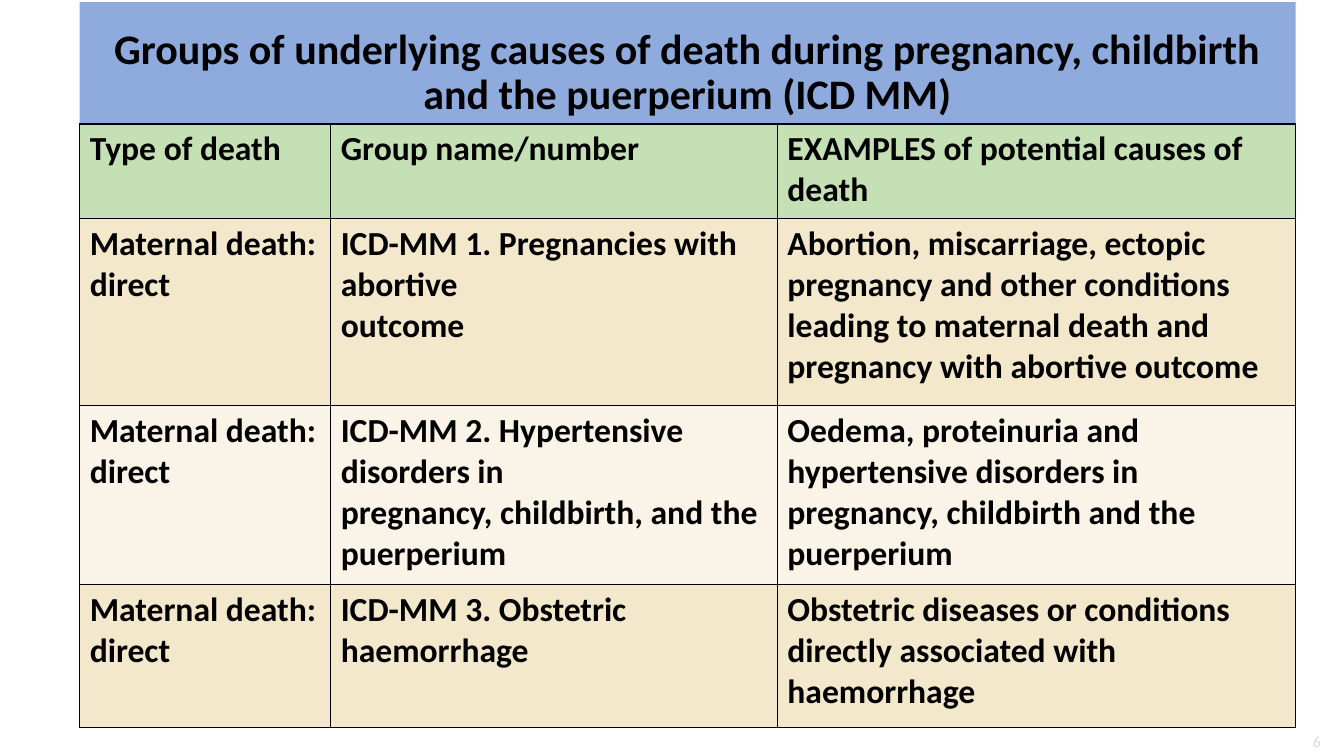
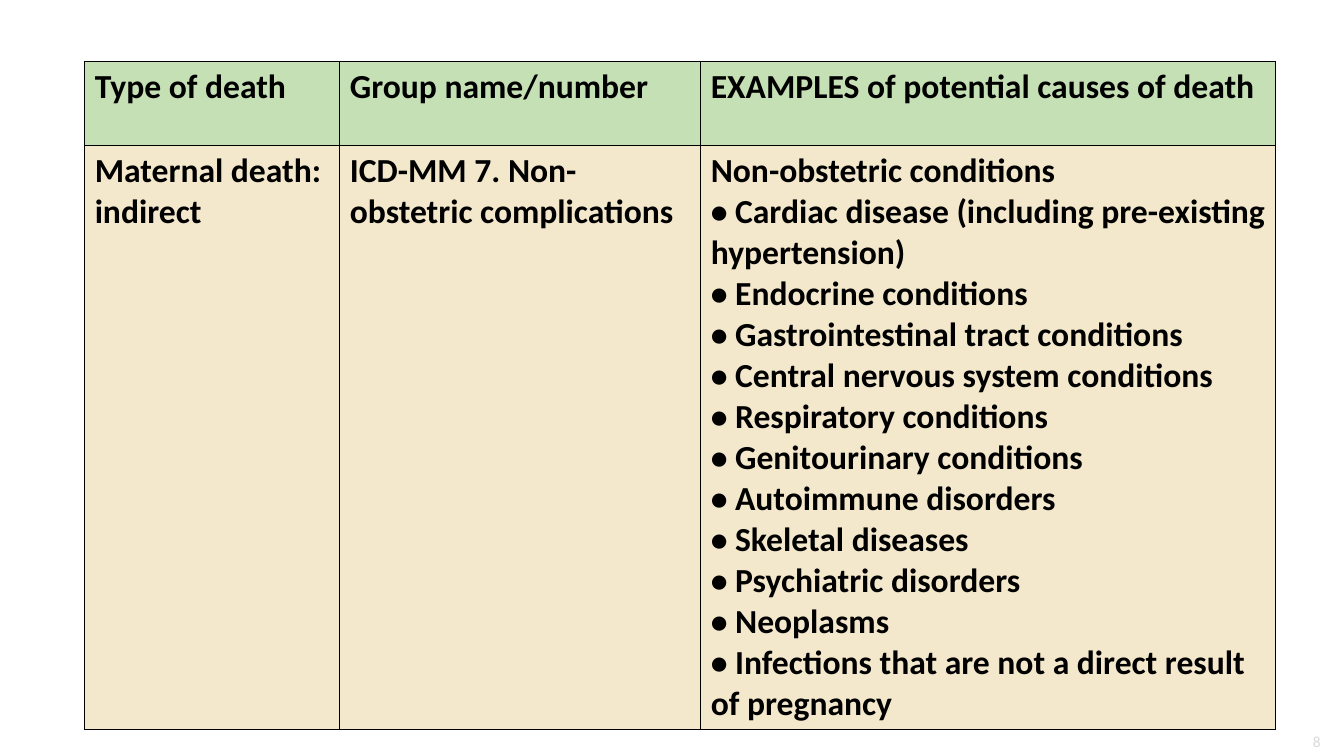
import copy

import lxml.etree
import pptx
import pptx.dml.color
import pptx.enum.shapes
import pptx.enum.text
import pptx.oxml.ns
import pptx.util

Inches = pptx.util.Inches
Pt = pptx.util.Pt

COLORS = {
    "text": "000000",
    "border": "000000",
    "title band": "8FAADC",
    "header": "C5E0B4",
    "odd row": "F4E8CC",
    "even row": "F9F4E7",
    "page number": "D9D9D9",
}
FONT = "Calibri"
HEADER = ["Type of death", "Group name/number", "EXAMPLES of potential causes of death"]

DIRECT_CAUSES = [
    ["Maternal death: direct",
     "ICD-MM 1. Pregnancies with abortive\noutcome",
     "Abortion, miscarriage, ectopic pregnancy and other conditions leading to "
     "maternal death and pregnancy with abortive outcome"],
    ["Maternal death: direct",
     "ICD-MM 2. Hypertensive disorders in\npregnancy, childbirth, and the puerperium",
     "Oedema, proteinuria and hypertensive disorders in pregnancy, childbirth "
     "and the puerperium"],
    ["Maternal death: direct",
     "ICD-MM 3. Obstetric haemorrhage",
     "Obstetric diseases or conditions directly associated with haemorrhage"],
]

NON_OBSTETRIC_CONDITIONS = [
    "Cardiac disease (including pre-existing hypertension)",
    "Endocrine conditions",
    "Gastrointestinal tract conditions",
    "Central nervous system conditions",
    "Respiratory conditions",
    "Genitourinary conditions",
    "Autoimmune disorders",
    "Skeletal diseases",
    "Psychiatric disorders",
    "Neoplasms",
    "Infections that are not a direct result of pregnancy",
]
INDIRECT_CAUSES = [
    ["Maternal death: indirect",
     "ICD-MM 7. Non-obstetric complications",
     "\n".join(["Non-obstetric conditions"]
               + [f"• {condition}" for condition in NON_OBSTETRIC_CONDITIONS])],
]


def rgb(name):
    return pptx.dml.color.RGBColor.from_string(COLORS[name])


def fill_with(target, color):
    target.fill.solid()
    target.fill.fore_color.rgb = rgb(color)


def write(text_frame, text, size, color="text", bold=True):
    text_frame.text = text
    for paragraph in text_frame.paragraphs:
        for run in paragraph.runs:
            run.font.name = FONT
            run.font.size = Pt(size)
            run.font.bold = bold
            run.font.color.rgb = rgb(color)


def place(shape, left, top, width, height):
    shape.left, shape.top = Inches(left), Inches(top)
    shape.width, shape.height = Inches(width), Inches(height)


def add_cell_borders(cell):
    qn = pptx.oxml.ns.qn
    properties = cell._tc.get_or_add_tcPr()
    for side in ("lnL", "lnR", "lnT", "lnB"):
        line = lxml.etree.SubElement(properties, qn(f"a:{side}"), w=str(Pt(1)))
        solid = lxml.etree.SubElement(line, qn("a:solidFill"))
        lxml.etree.SubElement(solid, qn("a:srgbClr"), val=COLORS["border"])


def add_title_band(slide, text, left, top, width, height):
    title = slide.shapes.title
    place(title, left, top, width, height)
    fill_with(title, "title band")
    write(title.text_frame, text, 30)
    title.text_frame.word_wrap = True
    title.text_frame.auto_size = pptx.enum.text.MSO_AUTO_SIZE.NONE
    title.text_frame.vertical_anchor = pptx.enum.text.MSO_ANCHOR.BOTTOM
    paragraph = title.text_frame.paragraphs[0]
    paragraph.alignment = pptx.enum.text.PP_ALIGN.CENTER
    paragraph.line_spacing = 0.9


def add_causes_table(slide, causes, left, top, column_widths, row_heights):
    rows = [HEADER] + causes
    table = slide.shapes.add_table(
        len(rows), len(HEADER), Inches(left), Inches(top),
        Inches(sum(column_widths)), Inches(sum(row_heights))).table
    table.first_row = table.horz_banding = False
    for column, width in zip(table.columns, column_widths):
        column.width = Inches(width)
    for index, (row, height, texts) in enumerate(zip(table.rows, row_heights, rows)):
        row.height = Inches(height)
        color = "header" if index == 0 else "odd row" if index % 2 else "even row"
        for cell, text in zip(row.cells, texts):
            add_cell_borders(cell)
            fill_with(cell, color)
            write(cell.text_frame, text, 24)


def add_page_number(slide, number):
    """Fill in the layout's slide number placeholder at the bottom right."""
    number_type = pptx.enum.shapes.PP_PLACEHOLDER.SLIDE_NUMBER
    source = next(placeholder for placeholder in slide.slide_layout.placeholders
                  if placeholder.placeholder_format.type == number_type)
    slide.shapes.element.append(copy.deepcopy(source.element))
    shape = slide.shapes[-1]
    place(shape, 12.2, 7.21, 1, 0.3)
    write(shape.text_frame, str(number), 11, "page number", bold=False)
    shape.text_frame.vertical_anchor = pptx.enum.text.MSO_ANCHOR.MIDDLE
    shape.text_frame.paragraphs[0].alignment = pptx.enum.text.PP_ALIGN.RIGHT


def add_slide(presentation, layout_name, page_number):
    layout = presentation.slide_layouts.get_by_name(layout_name)
    slide = presentation.slides.add_slide(layout)
    add_page_number(slide, page_number)
    return slide


def main():
    presentation = pptx.Presentation()
    presentation.slide_width = Inches(13.33)
    presentation.slide_height = Inches(7.5)

    slide = add_slide(presentation, "Title Only", 6)
    add_title_band(slide, "Groups of underlying causes of death during pregnancy, "
                   "childbirth and the puerperium (ICD MM)", 0.79, 0.02, 12.06, 1.21)
    add_causes_table(slide, DIRECT_CAUSES, 0.79, 1.23,
                     [2.49, 4.43, 5.14], [0.94, 1.85, 1.78, 1.42])

    slide = add_slide(presentation, "Blank", 8)
    add_causes_table(slide, INDIRECT_CAUSES, 0.84, 0.61,
                     [2.53, 3.58, 5.7], [0.83, 5.7])

    presentation.save("out.pptx")


if __name__ == "__main__":
    main()
